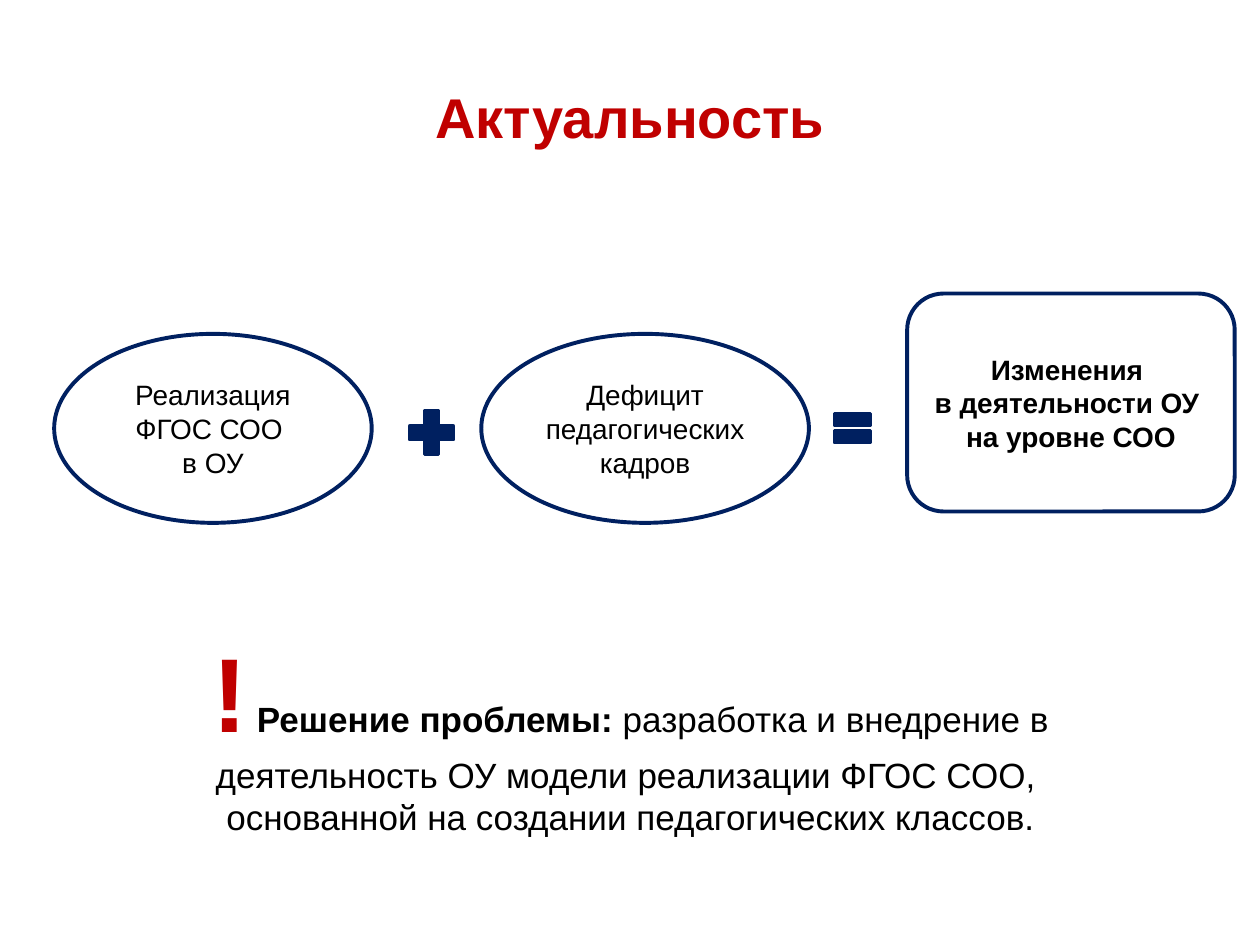
from pptx import Presentation
from pptx.dml.color import RGBColor
from pptx.enum.shapes import MSO_SHAPE
from pptx.enum.text import MSO_ANCHOR, MSO_AUTO_SIZE, PP_ALIGN
from pptx.util import Inches, Pt

RED = RGBColor(0xC0, 0x00, 0x00)
NAVY = RGBColor(0x00, 0x20, 0x60)
BLACK = RGBColor(0x00, 0x00, 0x00)
WHITE = RGBColor(0xFF, 0xFF, 0xFF)


class SlideBuilder:
    font_name = "Arial"
    cell = Inches(0.1)

    def __init__(self, presentation):
        self.slide = presentation.slides.add_slide(presentation.slide_layouts[5])

    def area(self, *cells):
        return [round(count * self.cell) for count in cells]

    def fill_text(self, text_frame, paragraphs, anchor):
        text_frame.word_wrap = True
        text_frame.vertical_anchor = anchor
        for index, runs in enumerate(paragraphs):
            paragraph = text_frame.add_paragraph() if index else text_frame.paragraphs[0]
            paragraph.alignment = PP_ALIGN.CENTER
            for text, size, color, bold in runs:
                run = paragraph.add_run()
                run.text = text
                run.font.name = self.font_name
                run.font.size = Pt(size)
                run.font.color.rgb = color
                run.font.bold = bold

    def title(self, text, *cells):
        title = self.slide.shapes.title
        title.left, title.top, title.width, title.height = self.area(*cells)
        self.fill_text(title.text_frame, [[(text, 32, RED, True)]], MSO_ANCHOR.MIDDLE)

    def shape(self, kind, cells, fill, line_width):
        shape = self.slide.shapes.add_shape(kind, *self.area(*cells))
        shape.shadow.inherit = False
        shape.fill.solid()
        shape.fill.fore_color.rgb = fill
        shape.line.color.rgb = NAVY
        shape.line.width = Pt(line_width)
        return shape

    def term(self, kind, cells, lines, bold=False):
        shape = self.shape(kind, cells, WHITE, 2.25)
        paragraphs = [[(line, 16, BLACK, bold)] for line in lines]
        self.fill_text(shape.text_frame, paragraphs, MSO_ANCHOR.MIDDLE)

    def operator(self, kind, left, top, side):
        self.shape(kind, (left, top, side, side), NAVY, 2)

    def text(self, cells, paragraphs):
        text_box = self.slide.shapes.add_textbox(*self.area(*cells))
        self.fill_text(text_box.text_frame, paragraphs, MSO_ANCHOR.TOP)
        text_box.text_frame.auto_size = MSO_AUTO_SIZE.SHAPE_TO_FIT_TEXT


def main():
    presentation = Presentation()
    presentation.slide_width = Inches(10)
    presentation.slide_height = Inches(7.5)
    builder = SlideBuilder(presentation)

    builder.title("Актуальность", 5, 3, 90, 12.5)
    builder.term(MSO_SHAPE.OVAL, (4.3, 26.5, 25.2, 15),
                 ["Реализация ФГОС СОО ", "в ОУ"])
    builder.term(MSO_SHAPE.OVAL, (38.2, 26.5, 26, 15),
                 ["Дефицит педагогических кадров"])
    builder.operator(MSO_SHAPE.MATH_PLUS, 31.9, 32, 4.7)
    builder.operator(MSO_SHAPE.MATH_EQUAL, 65.7, 32, 3.9)
    builder.term(MSO_SHAPE.ROUNDED_RECTANGLE, (72, 23.3, 26, 17.3),
                 ["Изменения ", "в деятельности ОУ ", "на уровне СОО"], bold=True)
    builder.text((8.3, 49.3, 83.5, 17.8), [
        [("!", 60, RED, True),
         (" Решение проблемы: ", 20, BLACK, True),
         ("разработка и внедрение в деятельность ОУ модели реализации ФГОС СОО, ",
          20, BLACK, False)],
        [("основанной на создании педагогических классов.", 20, BLACK, False)],
    ])
    presentation.save("out.pptx")


if __name__ == "__main__":
    main()
